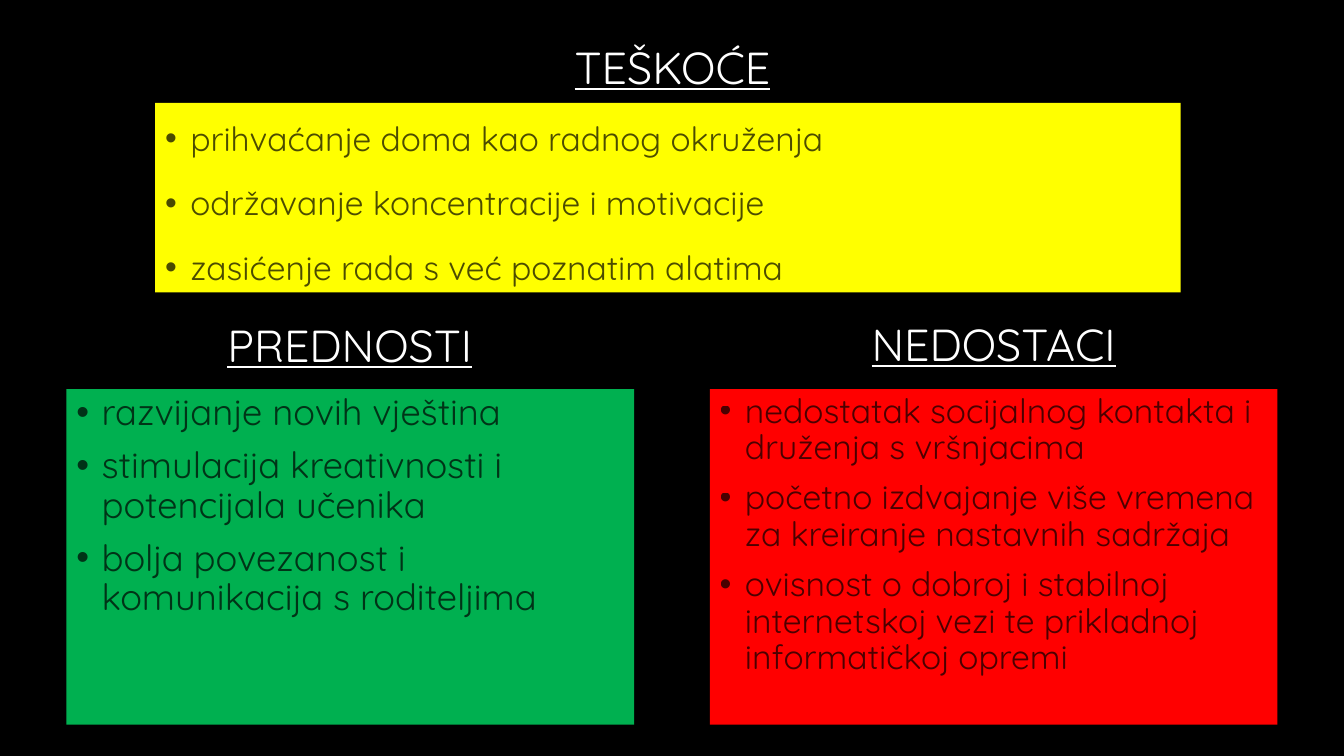
from dataclasses import dataclass

from lxml import etree
from pptx import Presentation
from pptx.dml.color import RGBColor
from pptx.enum.shapes import MSO_SHAPE
from pptx.enum.text import MSO_ANCHOR, PP_ALIGN
from pptx.oxml.ns import qn
from pptx.util import Inches, Pt

RECT = MSO_SHAPE.RECTANGLE
TOP, BOTTOM = MSO_ANCHOR.TOP, MSO_ANCHOR.BOTTOM
LEFT, CENTER = PP_ALIGN.LEFT, PP_ALIGN.CENTER


@dataclass(frozen=True)
class Theme:
    font: str = "Quicksand"
    back: str = "000000"
    title: str = "FFFFFF"
    text: str = "000000"
    yellow: str = "FFFF00"
    green: str = "00B050"
    red: str = "FF0000"
    head: float = 32
    hard: float = 24
    pros: float = 26
    cons: float = 24.1


theme = Theme()


def write(shape, lines, size, color, align=LEFT, anchor=TOP, space=0.9,
          under=False, bullet=False, alpha=None):
    """Fill a shape with one paragraph per line; alpha is opacity in percent."""
    frame = shape.text_frame
    frame.word_wrap = True
    frame.vertical_anchor = anchor
    for i, line in enumerate(lines):
        para = frame.add_paragraph() if i else frame.paragraphs[0]
        para.alignment = align
        para.line_spacing = space
        para.space_before = Pt(10 if i else 0)
        if bullet:
            props = para._p.get_or_add_pPr()
            props.set("marL", str(Inches(0.25)))
            props.set("indent", str(Inches(-0.25)))
            etree.SubElement(props, qn("a:buFont")).set("typeface", "Arial")
            etree.SubElement(props, qn("a:buChar")).set("char", "•")
        run = para.add_run()
        run.text = line
        font = run.font
        font.name, font.size = theme.font, Pt(size)
        font.underline = under
        font.color.rgb = RGBColor.from_string(color)
        if alpha:
            tint = run._r.rPr.find(".//" + qn("a:srgbClr"))
            etree.SubElement(tint, qn("a:alpha")).set("val", str(alpha * 1000))


deck = Presentation()
deck.slide_width, deck.slide_height = Inches(13.33), Inches(7.5)
slide = deck.slides.add_slide(deck.slide_layouts[6])
back = slide.background.fill
back.solid()
back.fore_color.rgb = RGBColor.from_string(theme.back)

# Each panel: title, title place, box place, fill, type size, line spacing, items
panels = [
    ("PREDNOSTI", (2.12, 2.91, 2.7, 0.83), (0.66, 3.86, 5.63, 3.33),
     theme.green, theme.pros, 0.9, [
         "razvijanje novih vještina",
         "stimulacija kreativnosti i potencijala učenika",
         "bolja povezanost i komunikacija s roditeljima"]),
    ("NEDOSTACI", (7.04, 2.9, 5.63, 0.83), (7.04, 3.86, 5.63, 3.33),
     theme.red, theme.cons, 0.9, [
         "nedostatak socijalnog kontakta i druženja s vršnjacima",
         "početno izdvajanje više vremena za kreiranje nastavnih sadržaja",
         "ovisnost o dobroj i stabilnoj internetskoj vezi te prikladnoj "
         "informatičkoj opremi"]),
    ("TEŠKOĆE", (5.32, 0.15, 2.7, 0.83), (1.54, 1.02, 10.17, 1.88),
     theme.yellow, theme.hard, 1.25, [
         "prihvaćanje doma kao radnog okruženja",
         "održavanje koncentracije i motivacije",
         "zasićenje rada s već poznatim alatima"]),
]

for title, spot, area, fill, size, space, items in panels:
    head = slide.shapes.add_textbox(*map(Inches, spot))
    write(head, [title], theme.head, theme.title, align=CENTER,
          anchor=BOTTOM, space=space, under=True)
    box = slide.shapes.add_shape(RECT, *map(Inches, area))
    box.shadow.inherit = False
    box.fill.solid()
    box.fill.fore_color.rgb = RGBColor.from_string(fill)
    box.line.fill.background()
    write(box, items, size, theme.text, space=space, bullet=True, alpha=70)

deck.save("out.pptx")
